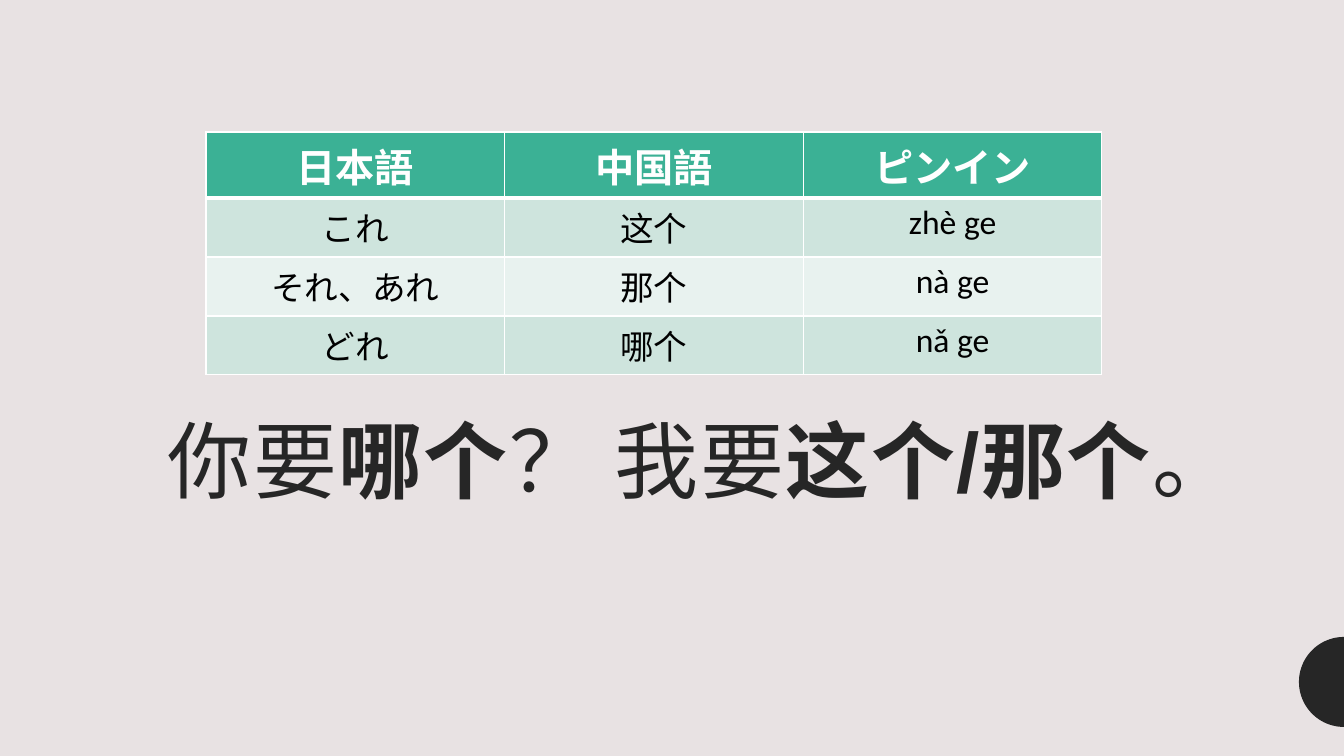
from dataclasses import dataclass
from math import cos, pi, sin

from lxml.etree import SubElement
from pptx import Presentation
from pptx.dml.color import RGBColor as Rgb
from pptx.enum.text import MSO_ANCHOR as Anchor, PP_ALIGN as Align
from pptx.oxml.ns import qn
from pptx.util import Emu, Pt

SLIDE_WIDTH, SLIDE_HEIGHT = 1344, 756
EMU_PER_PX = 12192000 / SLIDE_WIDTH


@dataclass(frozen=True)
class Theme:
    background: str = "E8E2E3"
    ink: str = "262626"
    white: str = "FFFFFF"
    black: str = "000000"
    header: str = "3BB195"
    bands: tuple = ("CEE4DD", "E8F2EF")
    sentence_size: int = 60
    header_size: int = 28
    body_size: int = 24
    chinese_font: str = "Arial"
    base_font: str = "Calibri"


THEME = Theme()

PRONOUNS = [
    ("日本語", "中国語", "ピンイン"),
    ("これ", "这个", "zhè ge"),
    ("それ、あれ", "那个", "nà ge"),
    ("どれ", "哪个", "nǎ ge"),
]
SENTENCE = [
    ("你要", False),
    ("哪个", True),
    ("？ 我要", False),
    ("这个/那个", True),
    ("。", False),
]


def px(length):
    return Emu(round(length * EMU_PER_PX))


def set_all(target, values):
    for name, value in values.items():
        setattr(target, name, value)


def paint(fill, color):
    fill.solid()
    fill.fore_color.rgb = Rgb.from_string(color)


def add_run(paragraph, text, color, **font_values):
    run = paragraph.add_run()
    run.text = text
    set_all(run.font, font_values)
    run.font.color.rgb = Rgb.from_string(color)
    return run


def add_borders(cell, widths):
    """Draw white cell edges; widths maps an edge tag to points."""
    properties = cell._tc.get_or_add_tcPr()
    for position, (edge, width) in enumerate(widths.items()):
        line = properties.makeelement(qn(f"a:{edge}"), {"w": str(Pt(width))})
        solid = SubElement(line, qn("a:solidFill"))
        SubElement(solid, qn("a:srgbClr"), val=THEME.white)
        properties.insert(position, line)


def add_pronoun_table(slide, left, top, width, header_height, row_height):
    rows, columns = len(PRONOUNS), len(PRONOUNS[0])
    height = header_height + (rows - 1) * row_height
    table = slide.shapes.add_table(
        rows, columns, px(left), px(top), px(width), px(height)).table
    for column in table.columns:
        column.width = px(width / columns)
    for r, words in enumerate(PRONOUNS):
        is_header = r == 0
        table.rows[r].height = px(header_height if is_header else row_height)
        for c, word in enumerate(words):
            cell = table.cell(r, c)
            paint(cell.fill, THEME.header if is_header else THEME.bands[(r - 1) % 2])
            add_borders(cell, {"lnL": 1, "lnR": 1,
                               "lnT": 3 if r == 1 else 1,
                               "lnB": 3 if is_header else 1})
            paragraph = cell.text_frame.paragraphs[0]
            paragraph.alignment = Align.CENTER
            is_chinese = c == 1 and not is_header
            add_run(paragraph, word,
                    THEME.white if is_header else THEME.black,
                    name=THEME.chinese_font if is_chinese else THEME.base_font,
                    size=Pt(THEME.header_size if is_header else THEME.body_size),
                    bold=is_header)


def add_sentence(slide, left, top, width, height):
    frame = slide.shapes.add_textbox(
        px(left), px(top), px(width), px(height)).text_frame
    set_all(frame, {"word_wrap": True, "vertical_anchor": Anchor.TOP})
    paragraph = frame.paragraphs[0]
    paragraph.line_spacing = 1.25
    for text, bold in SENTENCE:
        run = add_run(paragraph, text, THEME.ink, name=THEME.chinese_font,
                      size=Pt(THEME.sentence_size), bold=bold)
        run.font._element.set("spc", "100")


def add_edge_half_disc(slide, center_y, radius, steps=48):
    """Place a half disc whose flat side lies on the slide's right edge."""
    angles = [pi / 2 + pi * step / steps for step in range(steps + 1)]
    points = [(px(SLIDE_WIDTH + radius * cos(a)), px(center_y + radius * sin(a)))
              for a in angles]
    builder = slide.shapes.build_freeform(*points[0])
    builder.add_line_segments(points[1:], close=True)
    disc = builder.convert_to_shape()
    disc.shadow.inherit = False
    paint(disc.fill, THEME.ink)
    disc.line.fill.background()


def main():
    deck = Presentation()
    set_all(deck, {"slide_width": px(SLIDE_WIDTH), "slide_height": px(SLIDE_HEIGHT)})
    slide = deck.slides.add_slide(deck.slide_layouts[6])
    paint(slide.background.fill, THEME.background)
    add_edge_half_disc(slide, center_y=682, radius=45)
    add_sentence(slide, left=158, top=378, width=1026, height=192)
    add_pronoun_table(slide, left=206, top=132, width=896,
                      header_height=66, row_height=59)
    deck.save("out.pptx")


if __name__ == "__main__":
    main()
